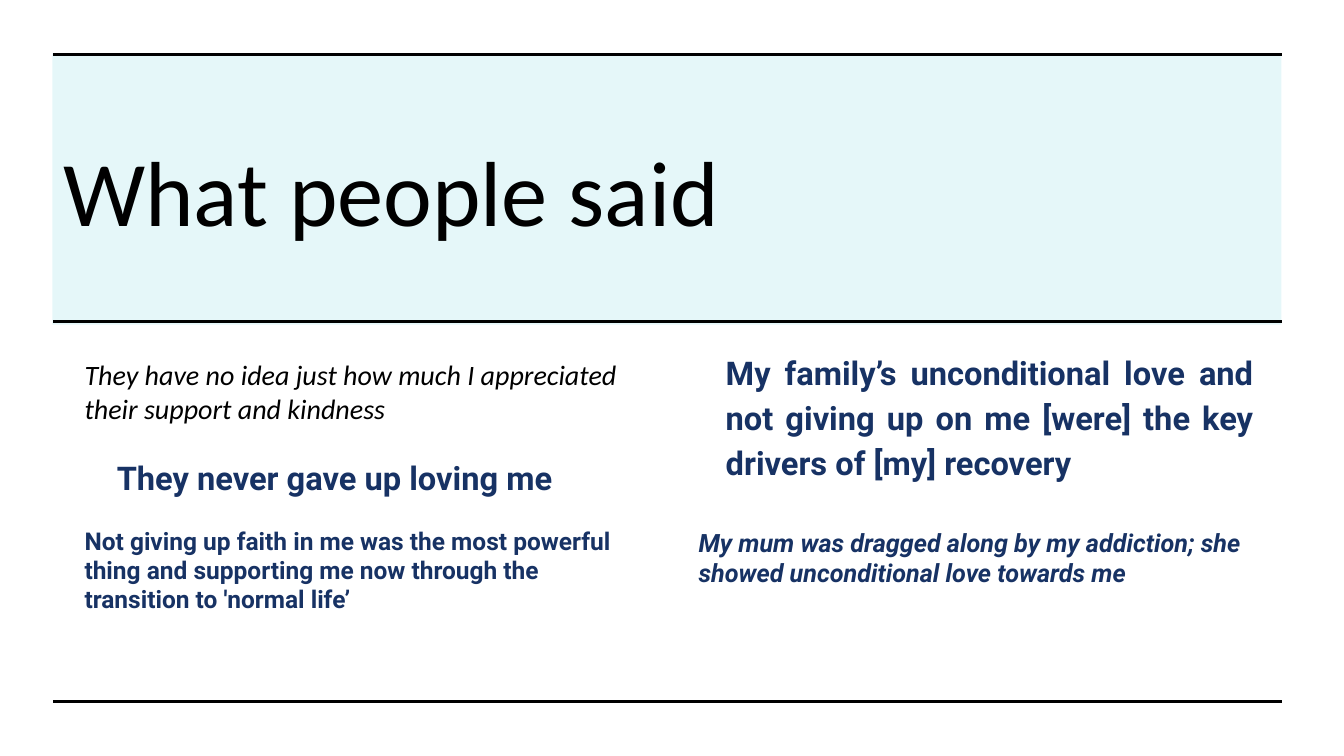
from lxml.etree import SubElement
from pptx import Presentation
from pptx.dml.color import RGBColor
from pptx.enum.shapes import MSO_CONNECTOR, MSO_SHAPE
from pptx.enum.text import MSO_ANCHOR, PP_ALIGN
from pptx.oxml.ns import qn
from pptx.util import Inches, Pt


def rgb(value):
    return RGBColor.from_string(value)


class Deck:
    BLACK = "000000"
    NAVY = "173264"
    TEAL = "00BAC8"
    BODY = "Calibri"
    QUOTE = "Roboto"

    def __init__(self, width, height):
        self.prs = Presentation()
        self.prs.slide_width = Inches(width)
        self.prs.slide_height = Inches(height)
        self.s = self.prs.slides.add_slide(self.prs.slide_layouts[6])

    def band(self, x, y, w, h, color, opacity):
        sp = self.s.shapes.add_shape(
            MSO_SHAPE.RECTANGLE, Inches(x), Inches(y), Inches(w), Inches(h))
        sp.shadow.inherit = False
        sp.fill.solid()
        sp.fill.fore_color.rgb = rgb(color)
        sp.line.fill.background()
        clr = sp._element.spPr.find(qn("a:solidFill"))[0]
        SubElement(clr, qn("a:alpha")).set("val", str(opacity * 1000))

    def rule(self, x1, x2, y):
        line = self.s.shapes.add_connector(
            MSO_CONNECTOR.STRAIGHT, Inches(x1), Inches(y), Inches(x2), Inches(y))
        line.line.color.rgb = rgb(self.BLACK)
        line.line.width = Pt(2.25)
        SubElement(line._element.spPr, qn("a:effectLst"))

    def text_box(self, x, y, w, h, anchor=MSO_ANCHOR.TOP):
        tf = self.s.shapes.add_textbox(
            Inches(x), Inches(y), Inches(w), Inches(h)).text_frame
        tf.word_wrap = True
        tf.vertical_anchor = anchor
        return tf

    def paragraph(self, tf, text, size, font=QUOTE, color=NAVY, bold=True,
                  italic=False, align=PP_ALIGN.LEFT, indent=0, spacing=1.0,
                  before=0, after=0):
        p = tf.paragraphs[0] if not tf.text else tf.add_paragraph()
        p.text = text
        p.alignment = align
        p.line_spacing = spacing
        p.space_before = Pt(before)
        p.space_after = Pt(after)
        p._p.get_or_add_pPr().set("marL", str(Inches(indent)))
        r = p.runs[0]
        r.font.name = font
        r.font.size = Pt(size)
        r.font.bold = bold
        r.font.italic = italic
        r.font.color.rgb = rgb(color)

    def save(self):
        self.prs.save("out.pptx")


def main():
    deck = Deck(13.33, 7.5)
    deck.band(0.52, 0.53, 12.19, 2.69, deck.TEAL, 10)

    title = deck.text_box(0.53, 1.07, 11.33, 1.63, MSO_ANCHOR.MIDDLE)
    deck.paragraph(title, "What people said", 66, deck.BODY, deck.BLACK, bold=False)

    for y in (0.54, 3.19, 6.96):
        deck.rule(0.53, 12.72, y)

    left = deck.text_box(0.74, 3.5, 5.67, 2.93)
    deck.paragraph(
        left, "They have no idea just how much I appreciated their support and kindness",
        20, deck.BODY, deck.BLACK, bold=False, italic=True)
    deck.paragraph(left, "They never gave up loving me", 23.3,
                   indent=0.32, spacing=1.15, before=19.4)
    deck.paragraph(
        left, "Not giving up faith in me was the most powerful thing and "
        "supporting me now through the transition to 'normal life’",
        17.5, before=20.5)

    right = deck.text_box(6.83, 3.39, 5.7, 3.04)
    deck.paragraph(
        right, "My family’s unconditional love and not giving up on me [were] "
        "the key drivers of [my] recovery",
        23.3, align=PP_ALIGN.JUSTIFY, indent=0.27, spacing=1.15, after=6)
    deck.paragraph(
        right, "My mum was dragged along by my addiction; "
        "she showed unconditional love towards me",
        18, italic=True, before=26.5, after=6)

    deck.save()


if __name__ == "__main__":
    main()
